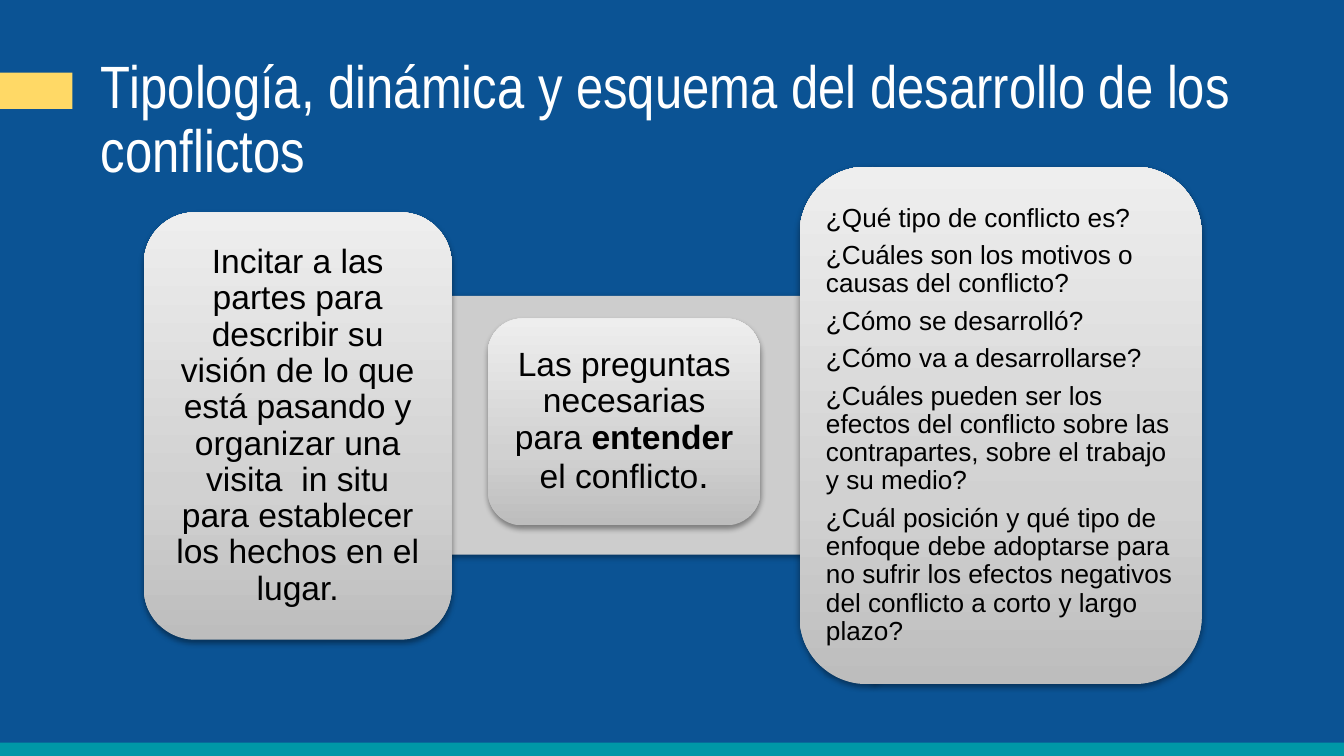
from pptx import Presentation
from pptx.dml.color import RGBColor
from pptx.enum.shapes import MSO_SHAPE
from pptx.enum.text import MSO_ANCHOR, MSO_AUTO_SIZE, PP_ALIGN
from pptx.oxml import parse_xml
from pptx.oxml.ns import nsdecls, qn
from pptx.util import Inches, Pt

THEME = {
    "back": "0B5394", "tab": "FFD966", "foot": "0097A7", "arrow": "CDCDCD",
    "light": "FFFFFF", "dark": "000000",
    "grad": [(0, "BDBDBD"), (35, "D1D1D1"), (100, "EEEEEE")],
    "head": "Arial Narrow", "body": "Arial",
    "title": 32, "large": 18, "dot": 20, "small": 14,
}
WIDE = 10
HIGH = WIDE * 9 / 16
TITLE = "Tipología, dinámica y esquema del desarrollo de los conflictos"
ARROW = (1.58, 1.24, 6.84, 3.85)
CARDS = [
    {"box": (1.07, 1.58, 2.29, 3.18), "size": "large", "inset": 0.07, "align": PP_ALIGN.CENTER,
     "text": [[("Incitar a las partes para describir su visión de lo que está pasando y "
                "organizar una visita  in situ para establecer los hechos en el lugar.", {})]]},
    {"box": (3.63, 2.37, 2.03, 1.54), "size": "large", "inset": 0.07, "align": PP_ALIGN.CENTER,
     "text": [[("Las preguntas necesarias para ", {}), ("entender", {"bold": True}),
               (" el conflicto", {}), (".", {"size": "dot"})]]},
    {"box": (5.95, 1.24, 2.99, 3.85), "size": "small", "inset": 0.05, "align": PP_ALIGN.LEFT,
     "text": [[(line, {})] for line in (
         "¿Qué tipo de conflicto es?",
         "¿Cuáles son los motivos o causas del conflicto?",
         "¿Cómo se desarrolló?",
         "¿Cómo va a desarrollarse?",
         "¿Cuáles pueden ser los efectos del conflicto sobre las contrapartes, "
         "sobre el trabajo y su medio?",
         "¿Cuál posición y qué tipo de enfoque debe adoptarse para no sufrir los efectos "
         "negativos del conflicto a corto y largo plazo?")]},
]


def color(name):
    return RGBColor.from_string(THEME[name])


def add_run(para, text, font, size, tint, bold=False):
    run = para.add_run()
    run.text = text
    run.font.name = THEME[font]
    run.font.size = Pt(THEME[size])
    run.font.bold = bold
    run.font.color.rgb = color(tint)


def set_frame(frame, inset, anchor):
    frame.word_wrap = True
    frame.auto_size = MSO_AUTO_SIZE.NONE
    frame.vertical_anchor = anchor
    frame.margin_left = frame.margin_right = Inches(inset)
    frame.margin_top = frame.margin_bottom = Inches(inset)


def add_shape(slide, kind, box, fill=None):
    shape = slide.shapes.add_shape(kind, *map(Inches, box))
    shape.shadow.inherit = False
    shape.line.fill.background()
    if fill:
        shape.fill.solid()
        shape.fill.fore_color.rgb = color(fill)
    return shape


def add_shadow(shape):
    shape._element.spPr.find(qn("a:effectLst")).append(parse_xml(
        f'<a:outerShdw {nsdecls("a")} blurRad="{Pt(3.1)}" dist="{Pt(1.6)}" dir="5400000" '
        f'rotWithShape="0"><a:srgbClr val="{THEME["dark"]}"><a:alpha val="38000"/>'
        '</a:srgbClr></a:outerShdw>'))


def add_grad(shape):
    shape.fill.gradient()
    shape.fill.gradient_angle = 90
    stops = shape._element.spPr.find(qn("a:gradFill")).find(qn("a:gsLst"))
    for stop in list(stops):
        stops.remove(stop)
    for place, tint in THEME["grad"]:
        stops.append(parse_xml(
            f'<a:gs {nsdecls("a")} pos="{place * 1000}"><a:srgbClr val="{tint}"/></a:gs>'))


def add_card(slide, card):
    shape = add_shape(slide, MSO_SHAPE.ROUNDED_RECTANGLE, card["box"])
    add_grad(shape)
    add_shadow(shape)
    frame = shape.text_frame
    set_frame(frame, card["inset"], MSO_ANCHOR.MIDDLE)
    for i, runs in enumerate(card["text"]):
        para = frame.add_paragraph() if i else frame.paragraphs[0]
        para.alignment = card["align"]
        para.line_spacing = 0.9
        para.space_after = Pt(0.35 * THEME[card["size"]])
        for text, style in runs:
            add_run(para, text, "body", style.get("size", card["size"]), "dark",
                    style.get("bold", False))


def add_title(slide):
    title = slide.shapes.title
    title.left, title.top, title.width, title.height = map(Inches, (0.65, 0.32, 9.17, 0.97))
    set_frame(title.text_frame, 0.1, MSO_ANCHOR.TOP)
    para = title.text_frame.paragraphs[0]
    para.alignment = PP_ALIGN.LEFT
    para.line_spacing = 0.9
    add_run(para, TITLE, "head", "title", "light")


def main():
    deck = Presentation()
    deck.slide_width, deck.slide_height = Inches(WIDE), Inches(HIGH)
    slide = deck.slides.add_slide(deck.slide_layouts[5])
    slide.background.fill.solid()
    slide.background.fill.fore_color.rgb = color("back")
    add_title(slide)
    add_shape(slide, MSO_SHAPE.RECTANGLE, (0, 0.54, 0.54, 0.27), "tab")
    add_shape(slide, MSO_SHAPE.RECTANGLE, (0, HIGH - 0.1, WIDE, 0.1), "foot")
    add_shadow(add_shape(slide, MSO_SHAPE.RIGHT_ARROW, ARROW, "arrow"))
    for card in CARDS:
        add_card(slide, card)
    deck.save("out.pptx")


if __name__ == "__main__":
    main()
